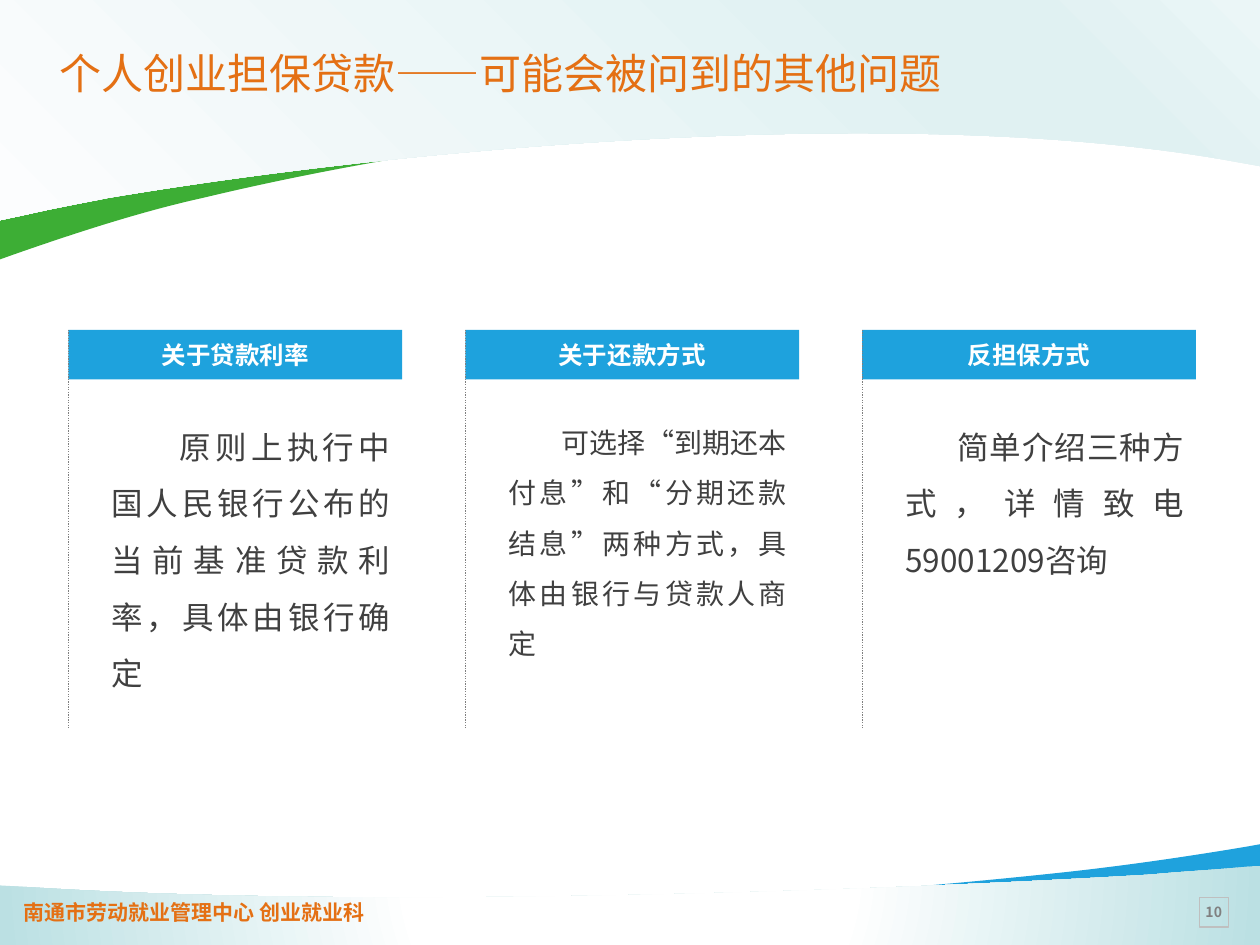
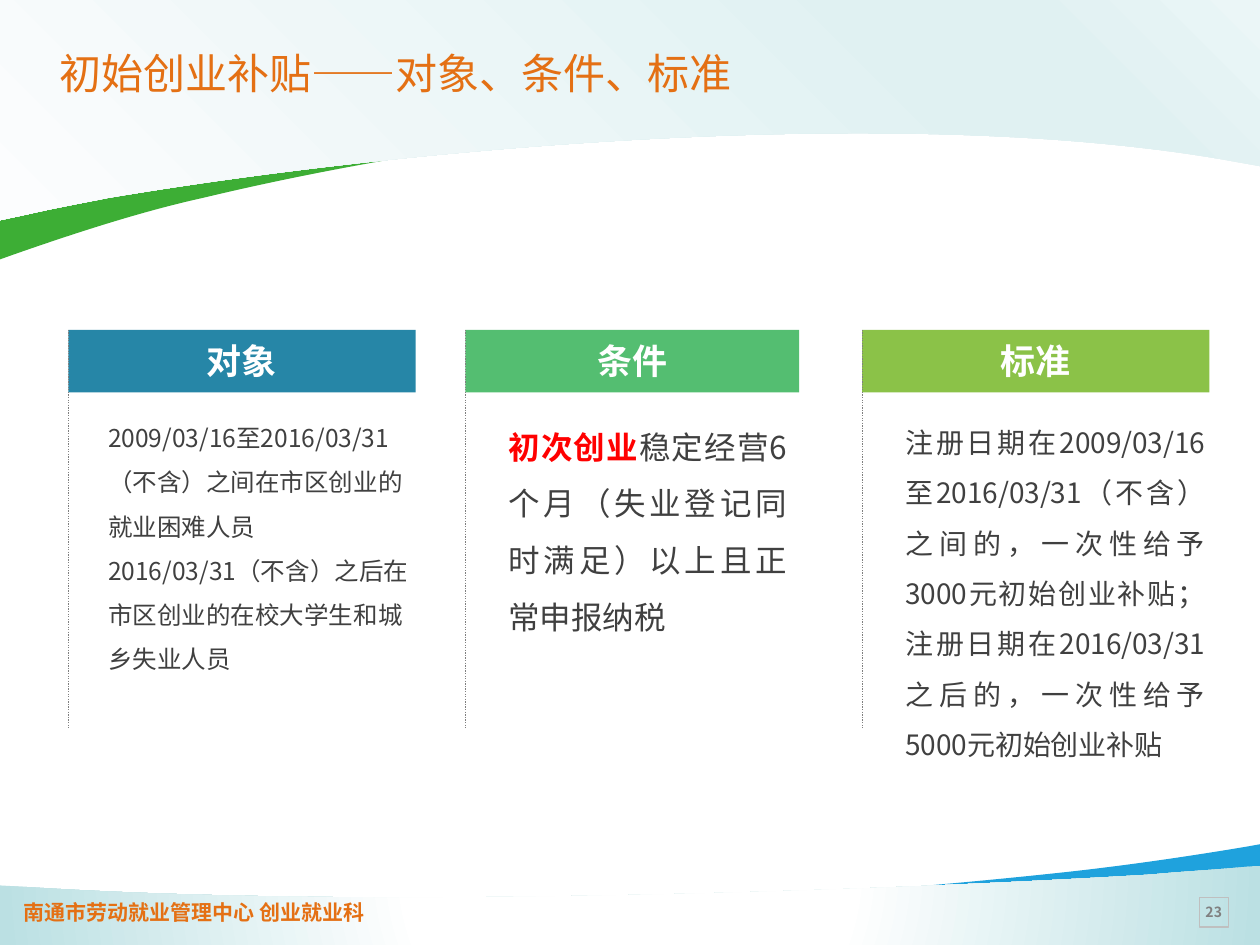
"""Build two three-column slides on start-up loans and start-up subsidies."""
from lxml import etree
from pptx import Presentation
from pptx.dml.color import RGBColor
from pptx.enum.dml import MSO_LINE
from pptx.enum.shapes import MSO_CONNECTOR, MSO_SHAPE
from pptx.enum.text import MSO_ANCHOR, PP_ALIGN
from pptx.oxml.ns import nsdecls, qn
from pptx.util import Cm, Pt

RECTANGLE, STRAIGHT = MSO_SHAPE.RECTANGLE, MSO_CONNECTOR.STRAIGHT
TOP, MIDDLE = MSO_ANCHOR.TOP, MSO_ANCHOR.MIDDLE
LEFT, CENTER, JUSTIFY = PP_ALIGN.LEFT, PP_ALIGN.CENTER, PP_ALIGN.JUSTIFY
DOTTED = MSO_LINE.ROUND_DOT

COLORS = {
    "orange": "E47014", "white": "FFFFFF", "text": "404040", "gray": "808080",
    "frame": "BFBFBF", "red": "FF0000", "wave_blue": "1FA2DD", "wave_green": "3DAE35",
    "blue": "1EA2DD", "teal": "2686A7", "green": "54BE71", "lime": "8BC248",
}
SANS, TITLE_FONT, DASH_FONT = "Noto Sans CJK SC", "Noto Sans CJK JP", "DejaVu Sans Mono"
FOOTER = "南通市劳动就业管理中心 创业就业科"

BOTTOM_FADE = {"stops": [(0, "FFFFFF"), (35, "FFFFFF"), (100, "BBE0E3")],
               "focus": {"l": 50, "t": -80, "r": 50, "b": 180}}
TOP_FADE = {"stops": [(0, "FCFDFE"), (74, "E0F1F2"), (83, "E0F1F2"), (100, "EBF6F7")],
            "focus": {"l": 0, "t": 100, "r": 100, "b": 0}}

WAVES = [
    ("wave_blue", [(25.4, 17.02), (25.4, 18.67), (0, 18.67), (0, 17.98), (0.03, 17.98),
                   (5.74, 18.82, 15.62, 18.21, 21.31, 17.6),
                   (22.45, 17.48, 23.75, 17.3, 25.12, 17.07)]),
    (BOTTOM_FADE, [(25.4, 17.45), (25.4, 19.05), (0, 19.05), (0, 17.85), (0.84, 17.9),
                   (7.47, 18.31, 17.35, 17.98, 23.22, 17.63),
                   (23.72, 17.58, 24.28, 17.55, 24.84, 17.5)]),
    ("wave_green", [(0, 5.23), (0, 1.68), (25.4, 1.68), (25.4, 3.15), (25.37, 3.12),
                    (19.66, 1.35, 9.78, 2.62, 4.09, 3.99),
                    (2.95, 4.24, 1.65, 4.65, 0.28, 5.13)]),
    (TOP_FADE, [(0, 4.44), (0, 0), (25.4, 0), (25.4, 3.35), (24.56, 3.2),
                (17.93, 2.08, 8.05, 3, 2.18, 3.99),
                (1.68, 4.09, 1.12, 4.19, 0.56, 4.32)]),
]

COLUMN_LEFT, COLUMN_PITCH = 1.38, 8
HEADER_TOP, RULE_BOTTOM, BODY_TOP = 6.65, 14.66, 8.11

PAGES = [
    {"number": "10", "title": ("个人创业担保贷款", "可能会被问到的其他问题"),
     "header_height": 1, "header_size": 14,
     "columns": [
         {"header": "关于贷款利率", "color": "blue", "width": 6.73,
          "body": (0.62, 6.12, 4.88), "size": 18, "align": JUSTIFY, "indent": 1.37,
          "paras": [[("原则上执行中国人民银行公布的当前基准贷款利率，具体由银行确定", {})]]},
         {"header": "关于还款方式", "color": "blue", "width": 6.73,
          "body": (0.62, 6.12, 5.38), "size": 16, "align": JUSTIFY, "indent": 1.07,
          "paras": [[("可选择“到期还本付息”和“分期还款结息”两种方式，具体由银行与贷款人商定", {})]]},
         {"header": "反担保方式", "color": "blue", "width": 6.73,
          "body": (0.62, 6.12, 3.71), "size": 18, "align": JUSTIFY, "indent": 1.05,
          "paras": [[("简单介绍三种方式，详情致电59001209咨询", {})]]},
     ]},
    {"number": "23", "title": ("初始创业补贴", "对象、条件、标准"),
     "header_height": 1.26, "header_size": 20,
     "columns": [
         {"header": "对象", "color": "teal", "width": 7,
          "body": (0.55, 6.81, 5.64), "size": 14, "align": LEFT, "indent": 0,
          "paras": [[("2009/03/16至2016/03/31", {})],
                    [("（不含）之间在市区创业的就业困难人员", {})],
                    [("2016/03/31（不含）之后在市区创业的在校大学生和城乡失业人员", {})]]},
         {"header": "条件", "color": "green", "width": 6.73,
          "body": (0.62, 6.12, 6.02), "size": 18, "align": JUSTIFY, "indent": 0,
          "paras": [[("初次创业", {"color": "red", "bold": True}),
                     ("稳定经营6个月（失业登记同时满足）以上且正常申报纳税", {})]]},
         {"header": "标准", "color": "lime", "width": 7,
          "body": (0.62, 6.55, 7.44), "size": 16, "align": JUSTIFY, "indent": 0,
          "paras": [[("注册日期在2009/03/16至2016/03/31（不含）之间的，一次性给予3000元初始创业补贴；"
                      "注册日期在2016/03/31之后的，一次性给予5000元初始创业补贴", {})]]},
     ]},
]


def write(para, text, size, color, name=SANS, asian_name=None, bold=False):
    """Add one formatted span with its Latin and East Asian fonts."""
    span = para.add_run()
    span.text = text
    for key, value in {"size": Pt(size), "name": name, "bold": bold}.items():
        setattr(span.font, key, value)
    span.font.color.rgb = RGBColor.from_string(COLORS[color])
    latin = span.font._element.find(qn("a:latin"))
    latin.addnext(etree.Element(qn("a:ea"), typeface=asian_name or name))


def set_frame(box, insets, wrap=True, anchor=TOP, align=LEFT):
    """Lay out a text frame and return its first paragraph."""
    frame = box.text_frame
    values = {"word_wrap": wrap, "vertical_anchor": anchor}
    for side, inset in zip(("left", "top", "right", "bottom"), insets):
        values[f"margin_{side}"] = Cm(inset)
    for key, value in values.items():
        setattr(frame, key, value)
    frame.paragraphs[0].alignment = align
    return frame.paragraphs[0]


deck = Presentation()
deck.slide_width, deck.slide_height = Cm(25.4), Cm(19.05)

for content in PAGES:
    page = deck.slides.add_slide(deck.slide_layouts[6])
    shapes = page.shapes

    for fill, outline in WAVES:
        corners = [(Cm(segment[-2]), Cm(segment[-1])) for segment in outline]
        builder = shapes.build_freeform(*corners[0], scale=1.0)
        builder.add_line_segments(corners[1:], close=True)
        wave = builder.convert_to_shape()
        sides = list(wave._element.iter(qn("a:lnTo")))
        for side, segment in zip(sides, outline[1:]):
            if len(segment) == 6:
                curve = etree.Element(qn("a:cubicBezTo"))
                for x, y in zip(segment[::2], segment[1::2]):
                    etree.SubElement(curve, qn("a:pt"), x=str(Cm(x) - wave.left),
                                     y=str(Cm(y) - wave.top))
                side.getparent().replace(side, curve)
        wave.shadow.inherit = False
        wave.line.fill.background()
        if isinstance(fill, str):
            wave.fill.solid()
            wave.fill.fore_color.rgb = RGBColor.from_string(COLORS[fill])
        else:
            stops = "".join(f'<a:gs pos="{place * 1000}"><a:srgbClr val="{shade}"/></a:gs>'
                            for place, shade in fill["stops"])
            focus = " ".join(f'{side}="{share * 1000}"' for side, share in fill["focus"].items())
            gradient = etree.fromstring(
                f'<a:gradFill {nsdecls("a")} rotWithShape="1"><a:gsLst>{stops}</a:gsLst>'
                f'<a:path path="circle"><a:fillToRect {focus}/></a:path></a:gradFill>')
            wave.fill.background()
            properties = wave._element.spPr
            properties.replace(properties.find(qn("a:noFill")), gradient)

    number_box = shapes.add_shape(RECTANGLE, Cm(24.18), Cm(18.09), Cm(0.58), Cm(0.6))
    number_box.shadow.inherit = False
    number_box.fill.background()
    number_box.line.color.rgb = RGBColor.from_string(COLORS["frame"])
    number_box.line.width = Pt(0.75)
    para = set_frame(number_box, (0.2, 0.2, 0.2, 0.2), wrap=False, anchor=MIDDLE, align=CENTER)
    write(para, content["number"], 8, "gray", bold=True)

    footer_box = shapes.add_textbox(Cm(0.48), Cm(18.01), Cm(7.21), Cm(0.76))
    para = set_frame(footer_box, (0, 0.13, 0.25, 0.13), wrap=False)
    write(para, FOOTER, 12, "orange", bold=True)

    title_box = shapes.add_textbox(Cm(1), Cm(0.76), Cm(19.99), Cm(1.47))
    para = set_frame(title_box, (0.2, 0.2, 0, 0.2), wrap=False)
    topic, question = content["title"]
    for text, name in ((topic, TITLE_FONT), ("——", DASH_FONT), (question, TITLE_FONT)):
        write(para, text, 24, "orange", name, TITLE_FONT)

    for index, column in enumerate(content["columns"]):
        left = COLUMN_LEFT + index * COLUMN_PITCH
        header = shapes.add_shape(RECTANGLE, Cm(left), Cm(HEADER_TOP),
                                  Cm(column["width"]), Cm(content["header_height"]))
        header.shadow.inherit = False
        header.fill.solid()
        header.fill.fore_color.rgb = RGBColor.from_string(COLORS[column["color"]])
        header.line.fill.background()
        para = set_frame(header, (0.25, 0.2, 0.25, 0.2), align=CENTER)
        write(para, column["header"], content["header_size"], "white", bold=True)

        rule = shapes.add_connector(STRAIGHT, Cm(left), Cm(HEADER_TOP), Cm(left), Cm(RULE_BOTTOM))
        rule.line.color.rgb = RGBColor.from_string(COLORS["gray"])
        rule.line.width = Pt(0.75)
        rule.line.dash_style = DOTTED
        etree.SubElement(rule._element.spPr, qn("a:effectLst"))

        offset, width, height = column["body"]
        body = shapes.add_textbox(Cm(left + offset), Cm(BODY_TOP), Cm(width), Cm(height))
        para = set_frame(body, (0.25, 0.13, 0.25, 0.13))
        for position, spans in enumerate(column["paras"]):
            if position:
                para = body.text_frame.add_paragraph()
            para.alignment = column["align"]
            para.line_spacing = 1.5
            layout = para._p.get_or_add_pPr()
            layout.set("hangingPunct", "0")
            if column["indent"]:
                layout.set("indent", str(Cm(column["indent"])))
            for text, style in spans:
                write(para, text, **{"size": column["size"], "color": "text", **style})

deck.save("out.pptx")
